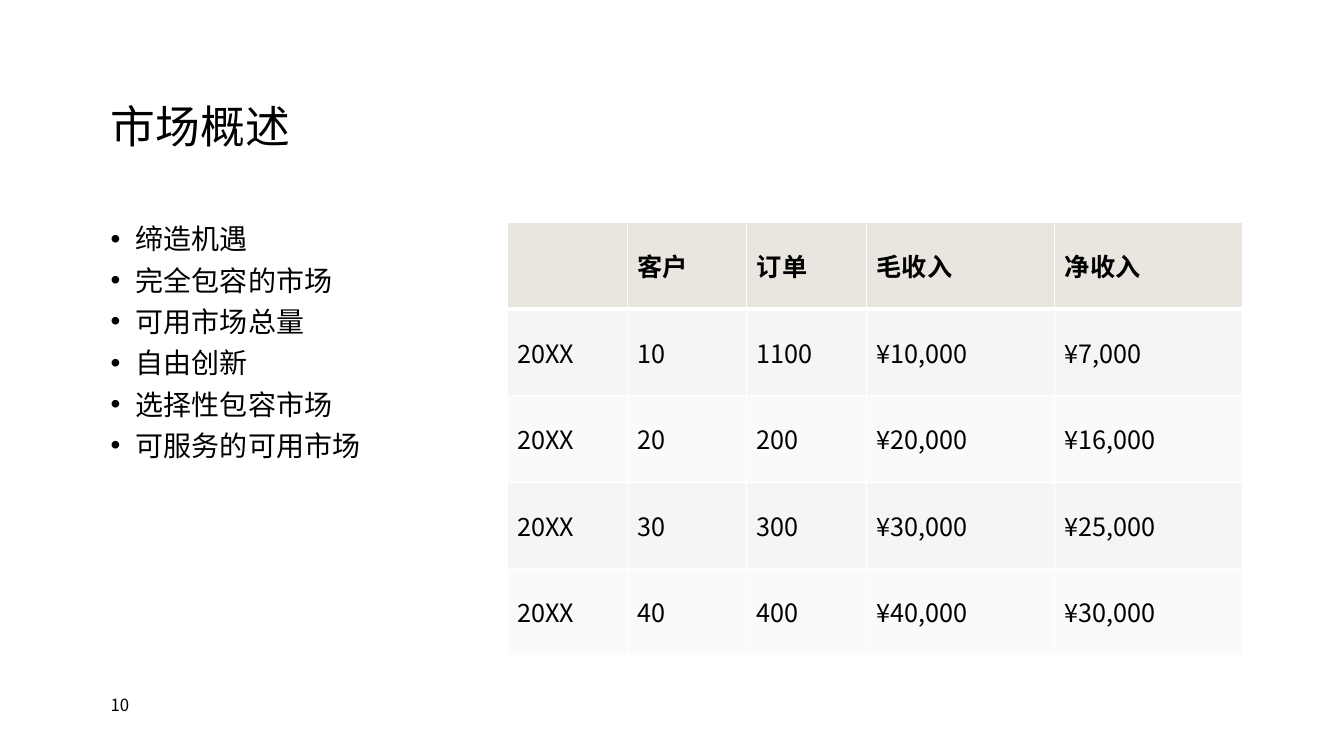
import pptx
import pptx.dml.color
import pptx.enum.text
import pptx.oxml.ns
import pptx.util
from dataclasses import dataclass
from lxml import etree

Pt = pptx.util.Pt
MIDDLE = pptx.enum.text.MSO_ANCHOR.MIDDLE
TOP = pptx.enum.text.MSO_ANCHOR.TOP


@dataclass(frozen=True)
class Theme:
    font: str = "Noto Sans CJK SC"
    text: str = "000000"
    border: str = "FFFFFF"
    header: str = "E9E6DF"
    bands: tuple = ("F7F5F3", "FBFAF9")
    title_size: float = 32
    body_size: float = 20
    table_size: float = 18
    number_size: float = 12


THEME = Theme()
BULLETS = ["缔造机遇", "完全包容的市场", "可用市场总量",
           "自由创新", "选择性包容市场", "可服务的可用市场"]
ROWS = [
    ["", "客户", "订单", "毛收入", "净收入"],
    ["20XX", "10", "1100", "¥10,000", "¥7,000"],
    ["20XX", "20", "200", "¥20,000", "¥16,000"],
    ["20XX", "30", "300", "¥30,000", "¥25,000"],
    ["20XX", "40", "400", "¥40,000", "¥30,000"],
]


def rgb(color):
    return pptx.dml.color.RGBColor.from_string(color)


def sub(parent, tag, **attributes):
    return etree.SubElement(parent, pptx.oxml.ns.qn(tag), attributes)


def write(p, text, size, bold=False, line=None, after=None, bullet=False):
    """Fill one paragraph with formatted text."""
    if bullet:
        pPr = p._p.get_or_add_pPr()
        pPr.set("marL", str(Pt(18)))
        pPr.set("indent", str(-Pt(18)))
        sub(pPr, "a:buFont", typeface="Arial")
        sub(pPr, "a:buChar", char="•")
    if line is not None:
        p.line_spacing = line
    if after is not None:
        p.space_after = Pt(after)
    r = p.add_run()
    r.text = text
    r.font.size = Pt(size)
    r.font.bold = bold
    r.font.name = THEME.font
    r.font.color.rgb = rgb(THEME.text)
    sub(r._r.get_or_add_rPr(), "a:ea", typeface=THEME.font)


def text_frame(sp, anchor):
    tf = sp.text_frame
    tf.word_wrap = True
    tf.auto_size = pptx.enum.text.MSO_AUTO_SIZE.NONE
    tf.vertical_anchor = anchor
    return tf


def add_title(s, x, y, w, h, text):
    sp = s.shapes.title
    sp.left, sp.top, sp.width, sp.height = Pt(x), Pt(y), Pt(w), Pt(h)
    p = text_frame(sp, MIDDLE).paragraphs[0]
    p.alignment = pptx.enum.text.PP_ALIGN.LEFT
    write(p, text, THEME.title_size, line=0.9)


def add_bullets(s, x, y, w, h, items):
    sp = s.shapes.add_textbox(Pt(x), Pt(y), Pt(w), Pt(h))
    tf = text_frame(sp, TOP)
    for i, item in enumerate(items):
        p = tf.add_paragraph() if i else tf.paragraphs[0]
        write(p, item, THEME.body_size, line=0.83, after=9.6, bullet=True)


def style_cell(cell, row):
    """Set the borders first, then the fill, as the schema orders them."""
    tcPr = cell._tc.get_or_add_tcPr()
    widths = {"L": 1, "R": 1, "T": 3 if row == 1 else 1, "B": 3 if row == 0 else 1}
    for side, width in widths.items():
        ln = sub(tcPr, f"a:ln{side}", w=str(Pt(width)))
        sub(sub(ln, "a:solidFill"), "a:srgbClr", val=THEME.border)
    cell.fill.solid()
    cell.fill.fore_color.rgb = rgb(THEME.bands[(row - 1) % 2] if row else THEME.header)
    cell.vertical_anchor = MIDDLE


def add_market_table(s, x, y, w, h, rows):
    wide = 134.5
    narrow = (w - 2 * wide) / 3
    table = s.shapes.add_table(len(rows), len(rows[0]), Pt(x), Pt(y), Pt(w), Pt(h)).table
    for column, width in zip(table.columns, [narrow] * 3 + [wide] * 2):
        column.width = Pt(width)
    for i, values in enumerate(rows):
        table.rows[i].height = Pt(h / len(rows))
        for j, value in enumerate(values):
            cell = table.cell(i, j)
            style_cell(cell, i)
            if value:
                write(cell.text_frame.paragraphs[0], value, THEME.table_size, bold=i == 0)


def add_slide_number(s, x, y, w, h, number):
    sp = s.shapes.add_textbox(Pt(x), Pt(y), Pt(w), Pt(h))
    write(text_frame(sp, MIDDLE).paragraphs[0], number, THEME.number_size)


def main():
    prs = pptx.Presentation()
    prs.slide_width, prs.slide_height = Pt(960), Pt(540)
    s = prs.slides.add_slide(prs.slide_layouts[5])
    left, content_top = 72, 159

    # Heading
    add_title(s, left, 28.8, 816, 126, "市场概述")
    # Market points and yearly figures
    add_bullets(s, left, content_top, 260, 308, BULLETS)
    add_market_table(s, 362.5, content_top, 525.5, 309, ROWS)
    # Footer
    add_slide_number(s, left, 492, 50, 23, "10")

    prs.save("out.pptx")


if __name__ == "__main__":
    main()
